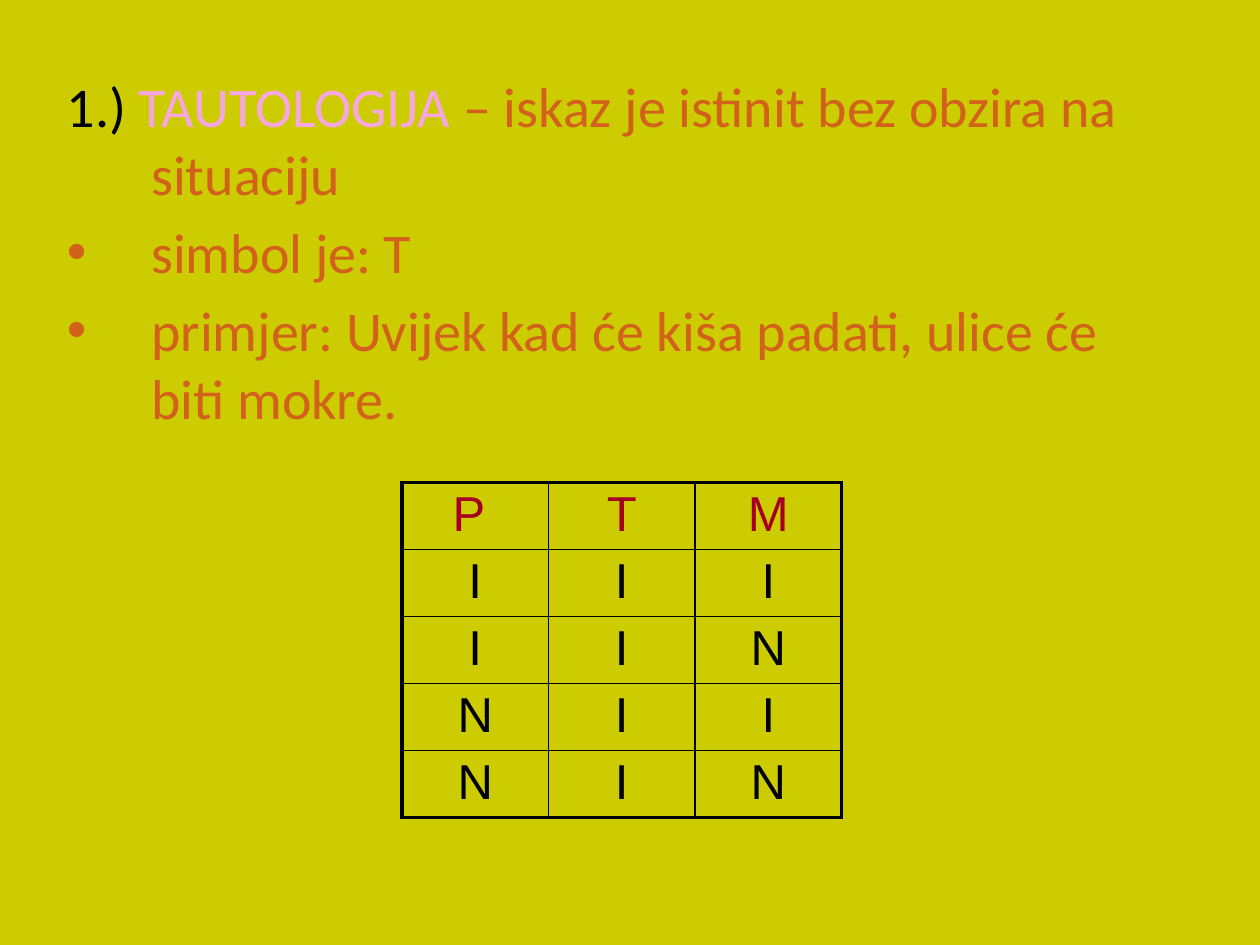
from dataclasses import dataclass
from typing import NamedTuple

from lxml import etree
from pptx import Presentation
from pptx.dml.color import RGBColor
from pptx.enum.text import PP_ALIGN
from pptx.oxml.ns import qn
from pptx.util import Inches, Pt

CENTER = PP_ALIGN.CENTER
SLIDE_WIDTH = Inches(10)
SLIDE_HEIGHT = Inches(7.5)


@dataclass(frozen=True)
class Theme:
    background: str = "CCCC00"
    ink: str = "000000"
    term: str = "F7A7E0"
    body: str = "D2611C"
    heading: str = "A50021"
    body_font: str = "Calibri"
    table_font: str = "Arial"
    body_size: float = 32
    table_size: float = 28
    outer_line: float = 2.25
    inner_line: float = 1


class Area(NamedTuple):
    left: float
    top: float
    width: float
    height: float

    def lengths(self) -> tuple[int, int, int, int]:
        return (Inches(self.left), Inches(self.top),
                Inches(self.width), Inches(self.height))


class TextRun(NamedTuple):
    text: str
    color: str


class ListItem(NamedTuple):
    runs: tuple[TextRun, ...]
    bulleted: bool = True


THEME = Theme()
BODY_AREA = Area(0.43, 0.52, 9, 6.61)
TABLE_AREA = Area(3.19, 3.83, 3.49, 2.66)
HANGING_INDENT = Inches(0.67)
CELL_MARGIN = Inches(0.04)

ITEMS = (
    ListItem((TextRun("1.) ", THEME.ink),
              TextRun("TAUTOLOGIJA ", THEME.term),
              TextRun("– iskaz je istinit bez obzira na situaciju", THEME.body)),
             bulleted=False),
    ListItem((TextRun("simbol je: T", THEME.body),)),
    ListItem((TextRun("primjer: Uvijek kad će kiša padati, ulice će biti mokre.",
                      THEME.body),)),
)
TRUTH_TABLE = (
    ("P ", "T", "M"),
    ("I", "I", "I"),
    ("I", "I", "N"),
    ("N", "I", "I"),
    ("N", "I", "N"),
)


def add_run(paragraph, content: TextRun, font_name: str, size: float) -> None:
    run = paragraph.add_run()
    run.text = content.text
    run.font.name = font_name
    run.font.size = Pt(size)
    run.font.color.rgb = RGBColor.from_string(content.color)


def set_list_format(paragraph, bulleted: bool) -> None:
    properties = paragraph._p.get_or_add_pPr()
    properties.set("marL", str(HANGING_INDENT))
    properties.set("indent", str(-HANGING_INDENT))
    if bulleted:
        etree.SubElement(properties, qn("a:buChar"), char="•")
    else:
        etree.SubElement(properties, qn("a:buNone"))


def fill_list(placeholder, items: tuple[ListItem, ...]) -> None:
    (placeholder.left, placeholder.top,
     placeholder.width, placeholder.height) = BODY_AREA.lengths()
    frame = placeholder.text_frame
    for index, item in enumerate(items):
        paragraph = frame.add_paragraph() if index else frame.paragraphs[0]
        set_list_format(paragraph, item.bulleted)
        for content in item.runs:
            add_run(paragraph, content, THEME.body_font, THEME.body_size)


def set_borders(cell, outer_sides: dict[str, bool]) -> None:
    properties = cell._tc.get_or_add_tcPr()
    for position, (side, is_outer) in enumerate(outer_sides.items()):
        width = THEME.outer_line if is_outer else THEME.inner_line
        line = etree.Element(qn(f"a:{side}"), w=str(Pt(width)))
        fill = etree.SubElement(line, qn("a:solidFill"))
        etree.SubElement(fill, qn("a:srgbClr"), val=THEME.ink)
        properties.insert(position, line)


def add_truth_table(slide, rows: tuple[tuple[str, ...], ...]) -> None:
    row_count, column_count = len(rows), len(rows[0])
    table = slide.shapes.add_table(row_count, column_count,
                                   *TABLE_AREA.lengths()).table
    table.first_row = False
    table.horz_banding = False
    for row_index, row in enumerate(rows):
        color = THEME.ink if row_index else THEME.heading
        for column_index, text in enumerate(row):
            cell = table.cell(row_index, column_index)
            cell.fill.background()
            cell.margin_top = cell.margin_bottom = CELL_MARGIN
            paragraph = cell.text_frame.paragraphs[0]
            paragraph.alignment = CENTER
            add_run(paragraph, TextRun(text, color),
                    THEME.table_font, THEME.table_size)
            set_borders(cell, {
                "lnL": column_index == 0,
                "lnR": column_index == column_count - 1,
                "lnT": row_index == 0,
                "lnB": row_index == row_count - 1,
            })


def main() -> None:
    presentation = Presentation()
    presentation.slide_width = SLIDE_WIDTH
    presentation.slide_height = SLIDE_HEIGHT
    slide = presentation.slides.add_slide(presentation.slide_layouts[1])
    background = slide.background.fill
    background.solid()
    background.fore_color.rgb = RGBColor.from_string(THEME.background)
    title = slide.shapes.title
    title.element.getparent().remove(title.element)
    fill_list(slide.placeholders[1], ITEMS)
    add_truth_table(slide, TRUTH_TABLE)
    presentation.save("out.pptx")


if __name__ == "__main__":
    main()
